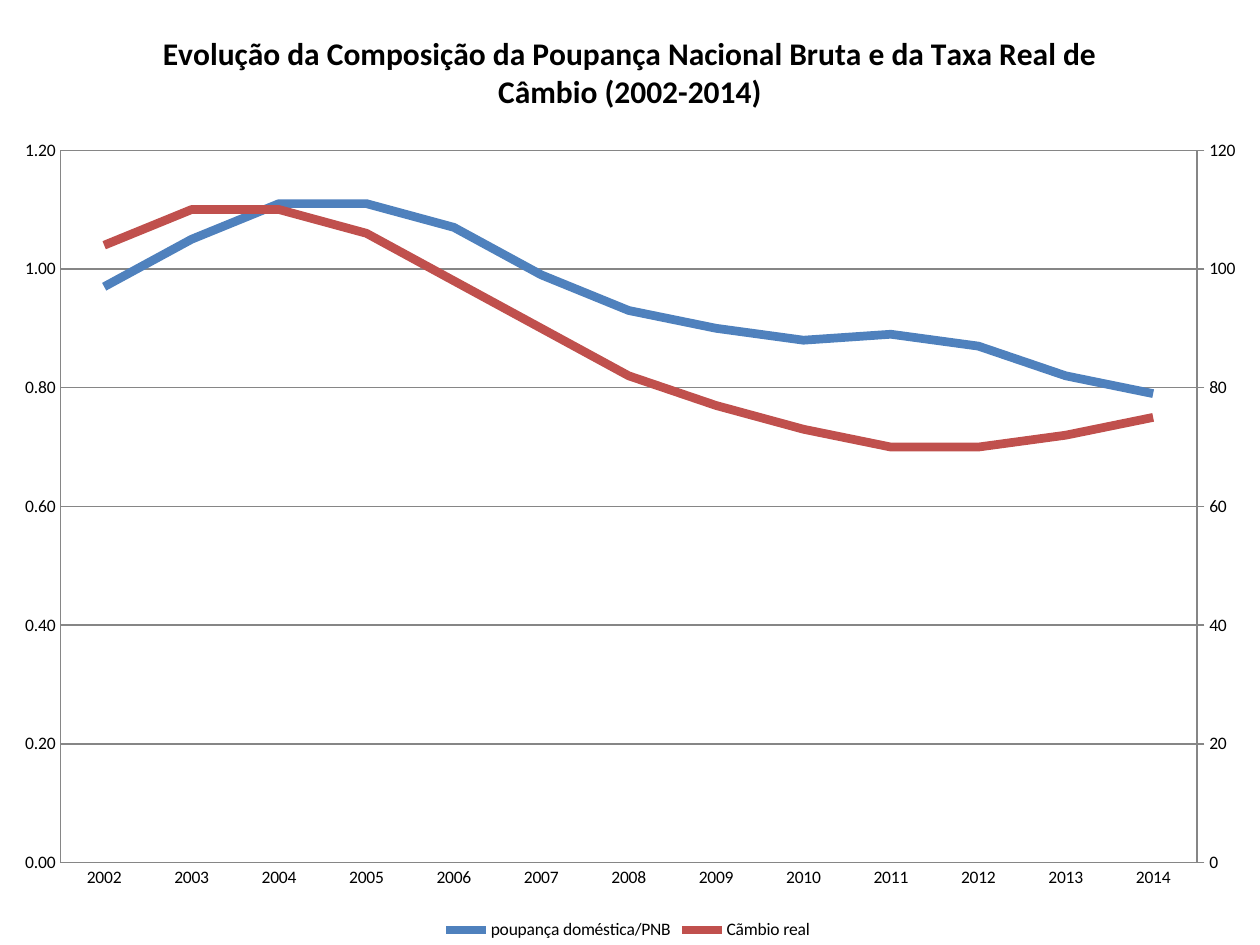
from copy import deepcopy

from pptx import Presentation, util as u
from pptx.chart.data import CategoryChartData
from pptx.dml.color import RGBColor
from pptx.enum import chart as ch
from pptx.oxml import parse_xml
from pptx.oxml.ns import nsdecls


def paint(line, color, width):
    line.color.rgb = RGBColor.from_string(color)
    line.width = u.Pt(width)


deck = Presentation()
deck.slide_width, deck.slide_height = u.Inches(10), u.Inches(7.5)
slide = deck.slides.add_slide(deck.slide_layouts[6])

data = CategoryChartData()
data.categories = [str(year) for year in range(2002, 2015)]
data.add_series("poupança doméstica/PNB", [
    0.97, 1.05, 1.11, 1.11, 1.07, 0.99, 0.93, 0.9, 0.88, 0.89, 0.87, 0.82, 0.79])
data.add_series("Cãmbio real ", [
    104, 110, 110, 106, 98, 90, 82, 77, 73, 70, 70, 72, 75])
chart = slide.shapes.add_chart(
    ch.XL_CHART_TYPE.LINE, 0, 0, u.Inches(10), u.Inches(7.5), data).chart
chart.font.name = "Calibri"
chart.font.size = u.Pt(10)
chart.font.color.rgb = RGBColor.from_string("000000")

# Title and legend
chart.has_title = True
title = chart.chart_title
title.include_in_layout = False
head = title.text_frame.paragraphs[0]
head.text = ("Evolução da Composição da Poupança Nacional Bruta "
             "e da Taxa Real de Câmbio (2002-2014)")
head.font.name = "Calibri"
head.font.size = u.Pt(18)
head.font.bold = True
chart.has_legend = True
chart.legend.position = ch.XL_LEGEND_POSITION.BOTTOM
chart.legend.include_in_layout = False

# Left and bottom axes
years, left = chart.category_axis, chart.value_axis
for axis in (years, left):
    axis.major_tick_mark = axis.minor_tick_mark = ch.XL_TICK_MARK.NONE
    paint(axis.format.line, "868686", 0.75)
left.minimum_scale, left.maximum_scale, left.major_unit = 0, 1.2, 0.2
left.has_major_gridlines = True
paint(left.major_gridlines.format.line, "868686", 0.75)
left.tick_labels.number_format = "0.00"
left.tick_labels.number_format_is_linked = False

plot = chart.plots[0]
plot.vary_by_categories = False
for series, color in zip(plot.series, ("4F81BD", "C0504D")):
    series.smooth = False
    series.marker.style = ch.XL_MARKER_STYLE.NONE
    paint(series.format.line, color, 5)

# Move the exchange rate to a second line plot with its own axes
area = chart.element.xpath("c:chart/c:plotArea")[0]
lines = area.xpath("c:lineChart")[0]
twin = deepcopy(lines)
lines.remove(lines.xpath("c:ser")[1])
twin.remove(twin.xpath("c:ser")[0])
lines.addnext(twin)
ids = {"c:catAx": "5001", "c:valAx": "5002"}
for node, num in zip(twin.xpath("c:axId"), ids.values()):
    node.set("val", num)

cross = list(ids.values())[::-1]
for (tag, num), other in zip(ids.items(), cross):
    axis = deepcopy(area.xpath(tag)[0])
    axis.xpath("c:axId")[0].set("val", num)
    axis.xpath("c:crossAx")[0].set("val", other)
    area.xpath("c:valAx")[-1].addnext(axis)

hidden, right = area.xpath("c:catAx")[-1], area.xpath("c:valAx")[-1]
hidden.xpath("c:delete")[0].set("val", "1")
right.remove(right.xpath("c:majorGridlines")[0])
right.xpath("c:numFmt")[0].set("formatCode", "0")
for tag, value in (("c:scaling/c:max", "120"), ("c:majorUnit", "20"),
                   ("c:axPos", "r"), ("c:majorTickMark", "out"),
                   ("c:crosses", "max")):
    for node in right.xpath(tag):
        node.set("val", value)
# An outward tick is the schema default, so it may be absent
for node in right.xpath("c:majorTickMark[not(@val)]"):
    node.set("val", "out")

# Fix the inner plot area
for node in area.xpath("c:layout"):
    area.remove(node)
box = "".join(f'<c:{key} val="{value}"/>' for key, value in (
    ("layoutTarget", "inner"), ("xMode", "edge"), ("yMode", "edge"),
    ("x", 0.048), ("y", 0.159), ("w", 0.902), ("h", 0.754)))
area.insert(0, parse_xml(
    f'<c:layout {nsdecls("c")}><c:manualLayout>{box}</c:manualLayout></c:layout>'))

deck.save("out.pptx")
